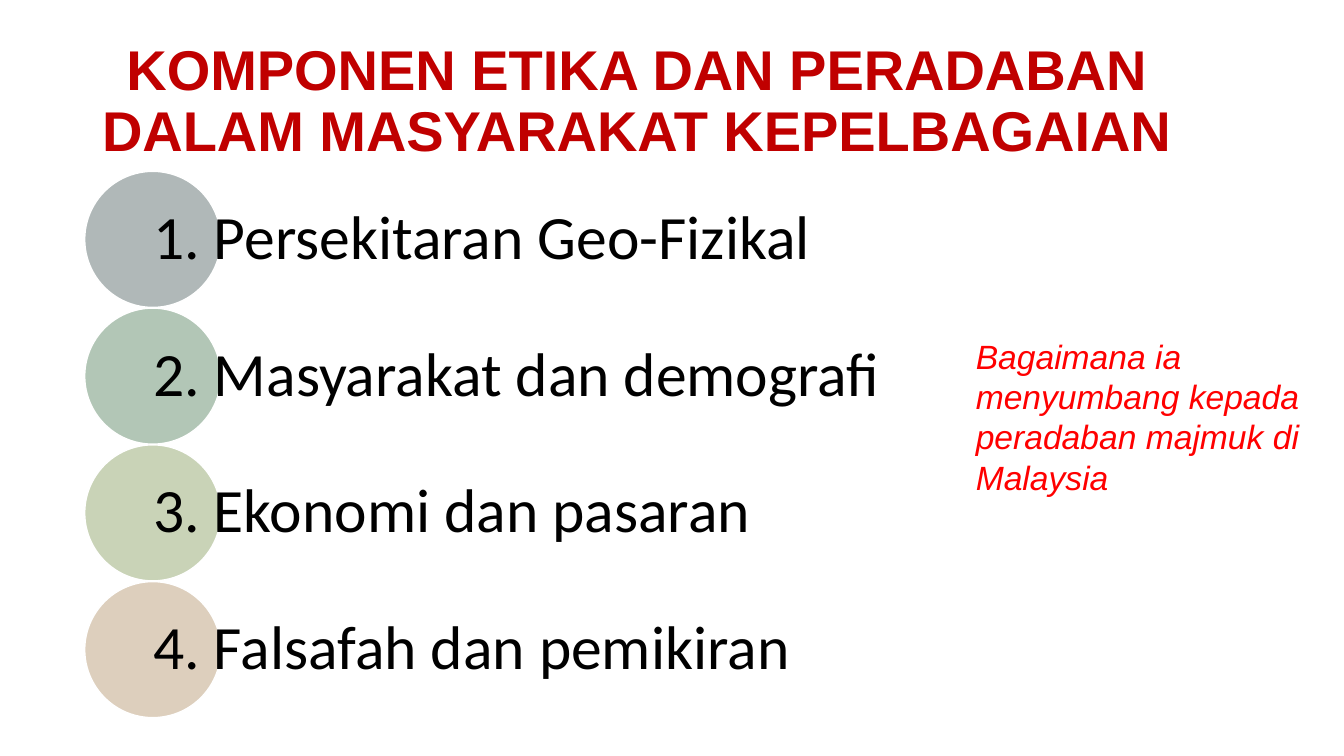
import pptx
import pptx.util
import pptx.dml.color
import pptx.enum.shapes
import pptx.enum.text
import pptx.oxml.ns
import lxml.etree

Inches = pptx.util.Inches
RGBColor = pptx.dml.color.RGBColor
Align = pptx.enum.text.PP_ALIGN
Anchor = pptx.enum.text.MSO_ANCHOR

WHITE = RGBColor(0xFF, 0xFF, 0xFF)
BLACK = RGBColor(0x00, 0x00, 0x00)
CRIMSON = RGBColor(0xC0, 0x00, 0x00)
RED = RGBColor(0xFF, 0x00, 0x00)
SLATE = RGBColor(0x62, 0x72, 0x72)
GREEN = RGBColor(0x67, 0x8F, 0x6F)
OLIVE = RGBColor(0x94, 0xA8, 0x70)
SAND = RGBColor(0xBD, 0xA0, 0x7D)

TOPICS = [
    ("1. Persekitaran Geo-Fizikal", SLATE),
    ("2. Masyarakat dan demografi", GREEN),
    ("3. Ekonomi dan pasaran", OLIVE),
    ("4. Falsafah dan pemikiran", SAND),
]


def write(frame, text, font="Arial", size=24, color=BLACK, bold=False,
          italic=False, align=Align.LEFT, spacing=1.0):
    para = frame.paragraphs[0]
    para.alignment = align
    para.line_spacing = spacing
    run = para.add_run()
    run.text = text
    run.font.name = font
    run.font.size = pptx.util.Pt(size)
    run.font.color.rgb = color
    run.font.bold = bold
    run.font.italic = italic


class Deck:
    def __init__(self, slide):
        self.slide = slide
        self.list = slide.shapes.add_group_shape()

    def disc(self, left, top, side, color, alpha):
        shape = self.list.shapes.add_shape(
            pptx.enum.shapes.MSO_SHAPE.OVAL,
            Inches(left), Inches(top), Inches(side), Inches(side))
        shape.shadow.inherit = False
        shape.fill.solid()
        shape.fill.fore_color.rgb = color
        qn = pptx.oxml.ns.qn
        tint = shape._element.spPr.find(qn("a:solidFill")).find(qn("a:srgbClr"))
        lxml.etree.SubElement(tint, qn("a:alpha")).set("val", str(alpha * 1000))
        shape.line.color.rgb = WHITE
        shape.line.width = pptx.util.Pt(1)

    def label(self, left, top, width, height, text):
        box = self.list.shapes.add_textbox(
            Inches(left), Inches(top), Inches(width), Inches(height))
        frame = box.text_frame
        frame.word_wrap = True
        frame.vertical_anchor = Anchor.MIDDLE
        frame.margin_left = frame.margin_right = 0
        frame.margin_top = frame.margin_bottom = Inches(0.06)
        write(frame, text, font="Calibri", size=44, spacing=0.9)

    def note(self, left, top, width, height, text, **style):
        box = self.slide.shapes.add_textbox(
            Inches(left), Inches(top), Inches(width), Inches(height))
        frame = box.text_frame
        frame.word_wrap = True
        frame.auto_size = pptx.enum.text.MSO_AUTO_SIZE.SHAPE_TO_FIT_TEXT
        write(frame, text, **style)


def main():
    show = pptx.Presentation()
    show.slide_width = Inches(13.33)
    show.slide_height = Inches(7.5)
    deck = Deck(show.slides.add_slide(show.slide_layouts[6]))

    side = 1.35
    first, last = 1.7, 5.77
    pitch = (last - first) / (len(TOPICS) - 1)
    for index, (text, color) in enumerate(TOPICS):
        top = first + index * pitch
        deck.disc(0.84, top, side, color, 50)
        deck.label(1.52, top, 7.23, side, text)

    deck.note(0.22, 0.37, 12.19, 1.33,
              "KOMPONEN ETIKA DAN PERADABAN DALAM MASYARAKAT KEPELBAGAIAN",
              size=40, color=CRIMSON, bold=True, align=Align.CENTER, spacing=0.9)
    deck.note(9.58, 3.28, 3.53, 1.72,
              "Bagaimana ia menyumbang kepada peradaban majmuk di Malaysia",
              color=RED, italic=True)
    show.save("out.pptx")


if __name__ == "__main__":
    main()
